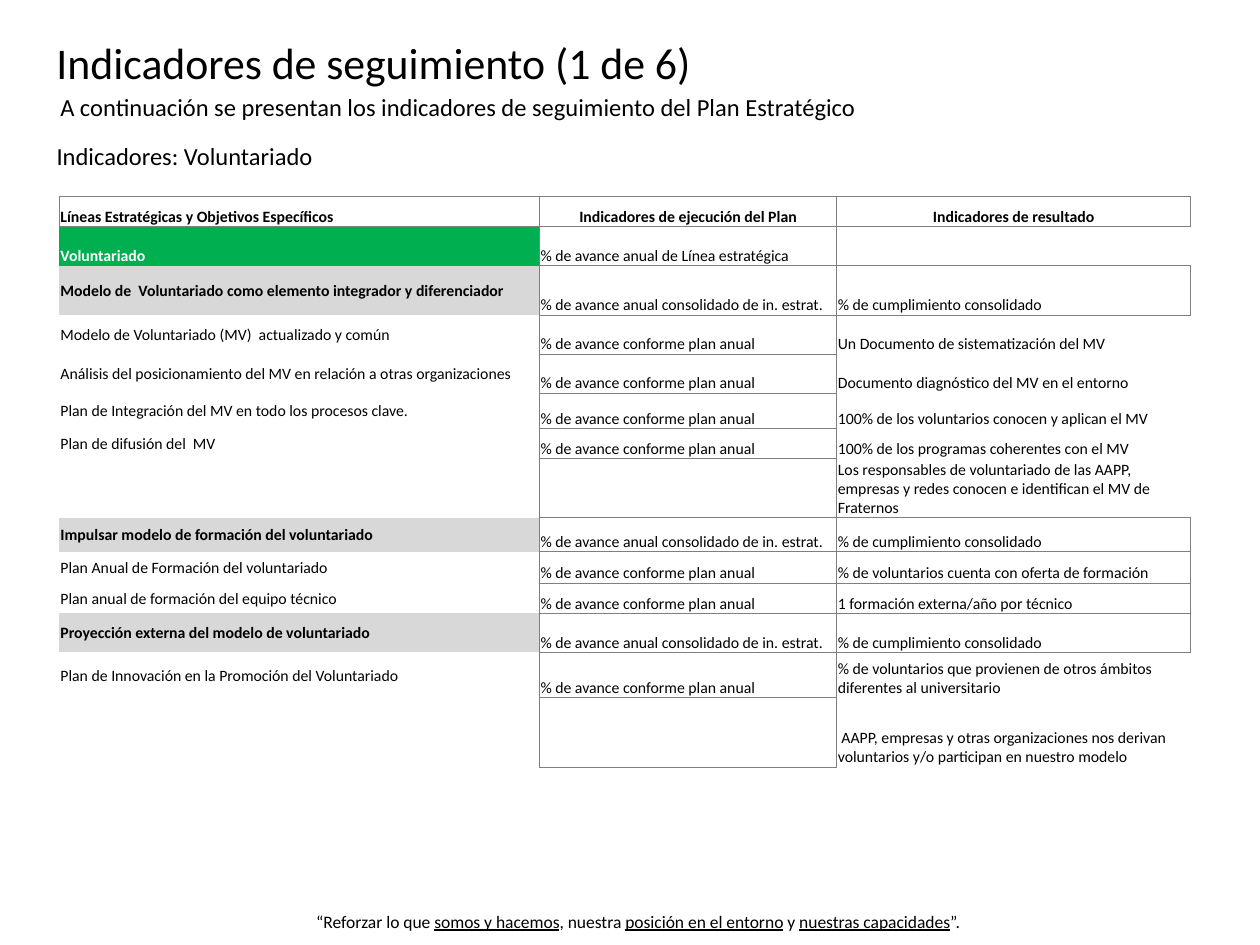
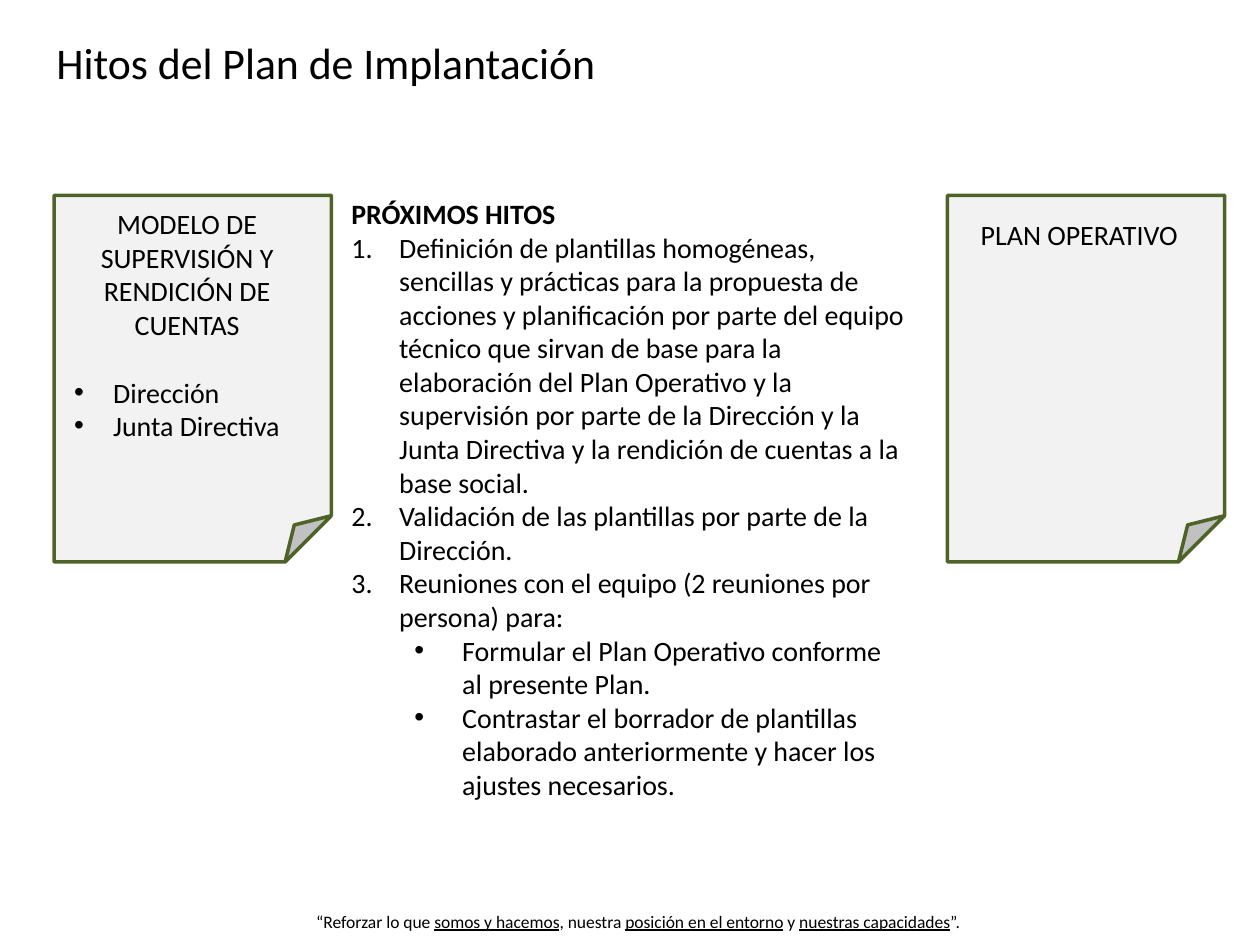
"""Build the two slides on follow-up indicators and plan milestones."""
from dataclasses import dataclass
from typing import Any, Optional

from lxml import etree
from pptx import Presentation
from pptx.dml.color import RGBColor
from pptx.enum import shapes, text
from pptx.oxml import ns
from pptx.util import Inches, Pt

FONT = "Calibri"
BLACK = RGBColor(0x00, 0x00, 0x00)
WHITE = RGBColor(0xFF, 0xFF, 0xFF)
GREEN = RGBColor(0x00, 0xB0, 0x50)
OLIVE = RGBColor(0x4F, 0x62, 0x28)
BAND_GREY = RGBColor(0xD8, 0xD8, 0xD8)
NOTE_GREY = RGBColor(0xF2, 0xF2, 0xF2)
BORDER_GREY = RGBColor(0x7F, 0x7F, 0x7F)

LEFT, CENTER = text.PP_ALIGN.LEFT, text.PP_ALIGN.CENTER
TOP, MIDDLE, BOTTOM = text.MSO_ANCHOR.TOP, text.MSO_ANCHOR.MIDDLE, text.MSO_ANCHOR.BOTTOM

LINE_PROGRESS = "% de avance anual de Línea estratégica"
GROUP_PROGRESS = "% de avance anual consolidado de in. estrat."
PLAN_PROGRESS = "% de avance conforme plan anual"
GROUP_RESULT = "% de cumplimiento consolidado"


@dataclass(frozen=True)
class Span:
    """A stretch of text in one style."""
    words: str
    bold: bool = False
    underline: bool = False
    color: RGBColor = BLACK


@dataclass(frozen=True)
class Para:
    """A paragraph with its list marker and hanging indent in inches."""
    spans: tuple[Span, ...]
    align: text.PP_ALIGN = LEFT
    marker: str = ""
    margin: float = 0
    hang: float = 0
    level: int = 0
    before: float = 0


@dataclass(frozen=True)
class Box:
    """A text box with its place in inches."""
    left: float
    top: float
    width: float
    height: float
    size: float
    paras: tuple[Para, ...]
    anchor: text.MSO_ANCHOR = TOP


@dataclass(frozen=True)
class Row:
    """A table row; kind is head, line, group or goal."""
    height: float
    kind: str
    aim: str
    progress: str
    result: str
    boxed: bool = False


COLUMN_WIDTHS = (3.81, 2.36, 2.81)
AIM_FILLS: dict[str, Optional[RGBColor]] = {"line": GREEN, "group": BAND_GREY}

ROWS = (
    Row(0.24, "head", "Líneas Estratégicas y Objetivos Específicos",
        "Indicadores de ejecución del Plan", "Indicadores de resultado", True),
    Row(0.31, "line", "Voluntariado", LINE_PROGRESS, ""),
    Row(0.39, "group", "Modelo de  Voluntariado como elemento integrador y diferenciador",
        GROUP_PROGRESS, GROUP_RESULT, True),
    Row(0.31, "goal", "Modelo de Voluntariado (MV)  actualizado y común",
        PLAN_PROGRESS, "Un Documento de sistematización del MV"),
    Row(0.31, "goal", "Análisis del posicionamiento del MV en relación a otras organizaciones",
        PLAN_PROGRESS, "Documento diagnóstico del MV en el entorno"),
    Row(0.28, "goal", "Plan de Integración del MV en todo los procesos clave.",
        PLAN_PROGRESS, "100% de los voluntarios conocen y aplican el MV"),
    Row(0.24, "goal", "Plan de difusión del  MV",
        PLAN_PROGRESS, "100% de los programas coherentes con el MV"),
    Row(0.47, "goal", "", "", "Los responsables de voluntariado de las AAPP, empresas y redes "
        "conocen e identifican el MV de Fraternos"),
    Row(0.27, "group", "Impulsar modelo de formación del voluntariado",
        GROUP_PROGRESS, GROUP_RESULT, True),
    Row(0.25, "goal", "Plan Anual de Formación del voluntariado",
        PLAN_PROGRESS, "% de voluntarios cuenta con oferta de formación", True),
    Row(0.24, "goal", "Plan anual de formación del equipo técnico",
        PLAN_PROGRESS, "1 formación externa/año por técnico", True),
    Row(0.31, "group", "Proyección externa del modelo de voluntariado",
        GROUP_PROGRESS, GROUP_RESULT, True),
    Row(0.36, "goal", "Plan de Innovación en la Promoción del Voluntariado", PLAN_PROGRESS,
        "% de voluntarios que provienen de otros ámbitos diferentes al universitario"),
    Row(0.55, "goal", "", "", " AAPP, empresas y otras organizaciones nos derivan "
        "voluntarios y/o participan en nuestro modelo"),
)


def plain(words: str, **style: Any) -> Para:
    """Return a paragraph holding one plain span."""
    return Para((Span(words),), **style)


def numbered(words: str) -> Para:
    """Return a numbered milestone."""
    return plain(words, marker="1.", margin=0.38, hang=0.38)


def task(words: str) -> Para:
    """Return a bulleted task below a milestone."""
    return plain(words, marker="•", margin=0.88, hang=0.38, level=1)


def reader(words: str, before: float = 0) -> Para:
    """Return a bulleted body that receives the accounts."""
    return plain(words, marker="•", margin=0.31, hang=0.31, before=before)


MOTTO = Box(2.04, 7.18, 6.08, 0.27, 10, (Para((
    Span("“Reforzar lo que "), Span("somos y hacemos", underline=True),
    Span(", nuestra "), Span("posición en el entorno", underline=True),
    Span(" y "), Span("nuestras capacidades", underline=True), Span("”. "),
), CENTER),))

INDICATOR_BOXES = (
    Box(0.35, 1.07, 9.35, 0.34, 14, (plain("Indicadores: Voluntariado"),)),
    Box(0.38, 0.68, 9.35, 0.34, 14, (plain(
        "A continuación se presentan los indicadores de seguimiento del Plan Estratégico"),)),
)

MILESTONE_BOXES = (
    Box(2.69, 1.51, 4.59, 4.95, 16, (
        Para((Span("PRÓXIMOS HITOS", bold=True),)),
        numbered("Definición de plantillas homogéneas, sencillas y prácticas para la propuesta "
                 "de acciones y planificación por parte del equipo técnico que sirvan de base "
                 "para la elaboración del Plan Operativo y la supervisión por parte de la "
                 "Dirección y la Junta Directiva y la rendición de cuentas a la base social."),
        numbered("Validación de las plantillas por parte de la Dirección."),
        numbered("Reuniones con el equipo (2 reuniones por persona) para:"),
        task("Formular el Plan Operativo conforme al presente Plan."),
        task("Contrastar el borrador de plantillas elaborado anteriormente y hacer los "
             "ajustes necesarios."),
    )),
    Box(0.49, 1.59, 1.99, 1.99, 16, (
        plain("MODELO DE SUPERVISIÓN Y RENDICIÓN DE CUENTAS", align=CENTER),
        reader("Dirección", before=19.5),
        reader("Junta Directiva"),
    )),
    Box(7.57, 1.68, 1.99, 0.64, 16, (plain("PLAN OPERATIVO", align=CENTER),)),
)
NOTE_LEFTS = (0.43, 7.52)


def apply(target: Any, values: dict[str, Any]) -> None:
    """Set each named attribute of the target."""
    for name, value in values.items():
        setattr(target, name, value)


def add_child(parent: Any, tag: str, **attributes: str) -> Any:
    """Append a DrawingML element to the parent."""
    return etree.SubElement(parent, ns.qn(f"a:{tag}"), attributes)


def set_marker(paragraph: Any, para: Para) -> None:
    """Give a paragraph its hanging number or bullet."""
    props = paragraph._p.get_or_add_pPr()
    props.set("marL", str(Inches(para.margin)))
    props.set("indent", str(-Inches(para.hang)))
    if para.marker == "•":
        add_child(props, "buFont", typeface="Arial")
        add_child(props, "buChar", char=para.marker)
    else:
        add_child(props, "buFont", typeface="+mj-lt")
        add_child(props, "buAutoNum", type="arabicPeriod")


def write_para(paragraph: Any, para: Para, size: float) -> None:
    """Write the spans of a paragraph in the shared font."""
    apply(paragraph, {"alignment": para.align, "level": para.level,
                      "space_before": Pt(para.before)})
    if para.marker:
        set_marker(paragraph, para)
    for span in para.spans:
        run = paragraph.add_run()
        run.text = span.words
        apply(run.font, {"name": FONT, "size": Pt(size), "bold": span.bold,
                         "underline": span.underline})
        run.font.color.rgb = span.color


def draw_box(page: Any, box: Box) -> None:
    """Draw a text box with all its paragraphs."""
    frame = page.shapes.add_textbox(Inches(box.left), Inches(box.top),
                                    Inches(box.width), Inches(box.height)).text_frame
    apply(frame, {"word_wrap": True, "vertical_anchor": box.anchor})
    for index, para in enumerate(box.paras):
        write_para(frame.add_paragraph() if index else frame.paragraphs[0], para, box.size)


def draw_note(page: Any, left: float) -> None:
    """Draw a sheet with a folded corner."""
    note = page.shapes.add_shape(shapes.MSO_SHAPE.FOLDED_CORNER, Inches(left), Inches(1.55),
                                 Inches(2.2), Inches(2.91))
    note.shadow.inherit = False
    note.fill.solid()
    note.fill.fore_color.rgb = NOTE_GREY
    note.line.color.rgb = OLIVE
    note.line.width = Pt(2)


def is_framed(row: int, column: int) -> bool:
    """Tell whether a cell has a line on all four sides."""
    if not (0 <= row < len(ROWS) and 0 <= column < len(COLUMN_WIDTHS)):
        return False
    return (ROWS[row].kind == "head", True, ROWS[row].boxed)[column]


def set_borders(cell: Any, row: int, column: int) -> None:
    """Draw the sides that belong to this cell or a framed neighbour."""
    props = cell._tc.get_or_add_tcPr()
    neighbours = {"lnL": (row, column - 1), "lnR": (row, column + 1),
                  "lnT": (row - 1, column), "lnB": (row + 1, column)}
    for index, (tag, neighbour) in enumerate(neighbours.items()):
        line = add_child(props, tag, w=str(Pt(0.5)))
        props.insert(index, line)
        if is_framed(row, column) or is_framed(*neighbour):
            add_child(add_child(line, "solidFill"), "srgbClr", val=str(BORDER_GREY))
        else:
            add_child(line, "noFill")


def fill_cell(cell: Any, row: int, column: int) -> None:
    """Write and format one table cell."""
    item = ROWS[row]
    is_aim = column == 0
    in_body = item.kind in ("group", "goal")
    apply(cell, {"margin_left": Inches(0.01), "margin_right": Inches(0.01),
                 "margin_top": Inches(0.01), "margin_bottom": 0,
                 "vertical_anchor": MIDDLE if is_aim and in_body else BOTTOM})
    color = AIM_FILLS.get(item.kind) if is_aim else WHITE
    if color is None:
        cell.fill.background()
    else:
        cell.fill.solid()
        cell.fill.fore_color.rgb = color
    words = (item.aim, item.progress, item.result)[column]
    paragraph = cell.text_frame.paragraphs[0]
    if words:
        span = Span(words, bold=item.kind == "head" or is_aim and item.kind != "goal",
                    color=WHITE if is_aim and item.kind == "line" else BLACK)
        align = CENTER if item.kind == "head" and not is_aim else LEFT
        write_para(paragraph, Para((span,), align), 9)
    else:
        add_child(paragraph._p, "endParaRPr", sz="900")
    set_borders(cell, row, column)


def draw_indicators(page: Any) -> None:
    """Draw the table of indicators."""
    table = page.shapes.add_table(
        len(ROWS), len(COLUMN_WIDTHS), Inches(0.47), Inches(1.56),
        Inches(sum(COLUMN_WIDTHS)), Inches(sum(row.height for row in ROWS))).table
    apply(table, {"first_row": False, "horz_banding": False})
    for column, width in enumerate(COLUMN_WIDTHS):
        table.columns[column].width = Inches(width)
    for row, item in enumerate(ROWS):
        table.rows[row].height = Inches(item.height)
        for column in range(len(COLUMN_WIDTHS)):
            fill_cell(table.cell(row, column), row, column)


def add_page(deck: Any, title: str) -> Any:
    """Add a blank page with the shared title and motto."""
    page = deck.slides.add_slide(deck.slide_layouts[6])
    draw_box(page, Box(0.35, 0.22, 9, 0.54, 25, (plain(title),), MIDDLE))
    draw_box(page, MOTTO)
    return page


def main() -> None:
    """Build and save the deck."""
    deck = Presentation()
    apply(deck, {"slide_width": Inches(10), "slide_height": Inches(7.5)})

    indicators = add_page(deck, "Indicadores de seguimiento (1 de 6)")
    for box in INDICATOR_BOXES:
        draw_box(indicators, box)
    draw_indicators(indicators)

    milestones = add_page(deck, "Hitos del Plan de Implantación")
    for left in NOTE_LEFTS:
        draw_note(milestones, left)
    for box in MILESTONE_BOXES:
        draw_box(milestones, box)

    deck.save("out.pptx")


if __name__ == "__main__":
    main()
